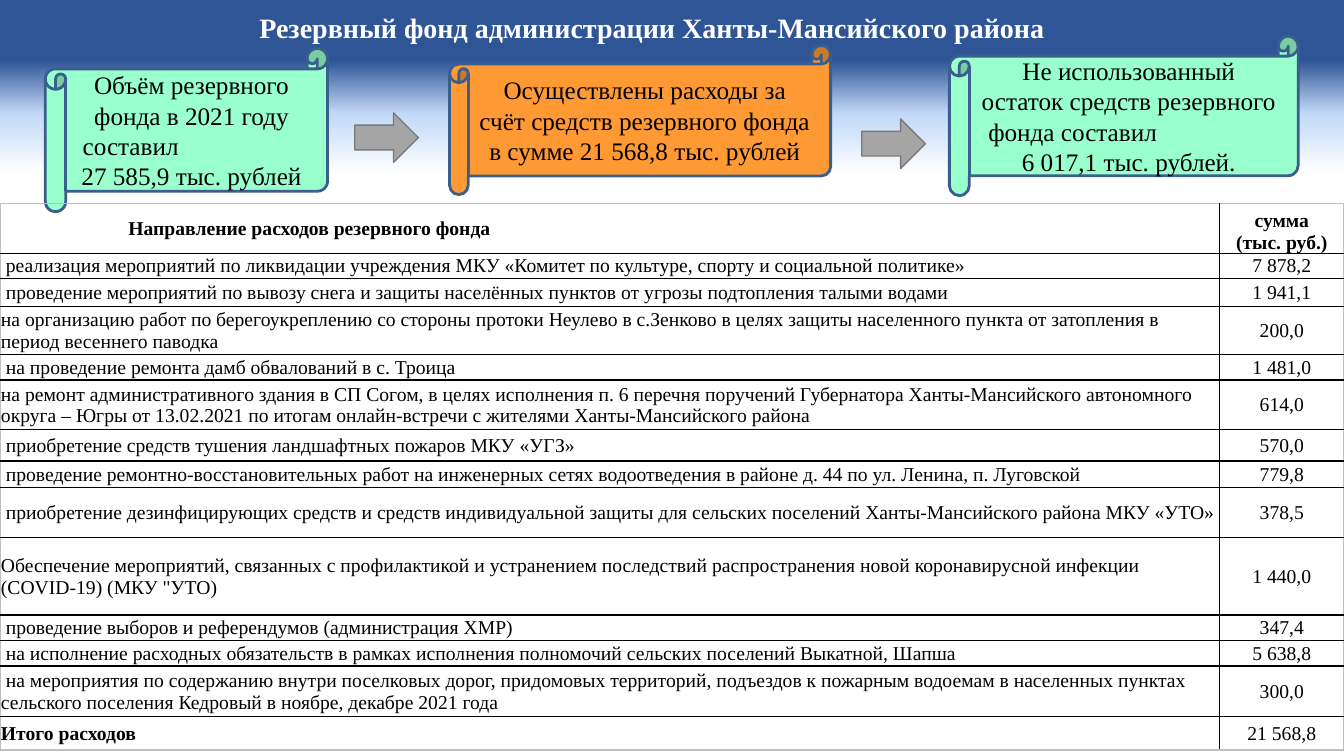
from lxml import etree
from pptx import Presentation
from pptx.dml.color import RGBColor
from pptx.enum.shapes import MSO_SHAPE as SHAPE
from pptx.enum.text import MSO_ANCHOR as ANCHOR, PP_ALIGN as ALIGN
from pptx.oxml.ns import qn
from pptx.util import Pt

COLORS = {
    "navy": "2F5597", "sky": "C2D8F8", "white": "FFFFFF", "black": "000000",
    "mint": "99FFCC", "orange": "FF9933", "outline": "3A5F8C",
    "arrow": "A5A5A5", "arrow_line": "7A7A7A", "frame": "BFBFBF",
}
FONT = "Times New Roman"

# Each scroll: box, fill, paragraphs as (text, left indent or None for centred)
SCROLLS = [
    ((32.4, 34.6, 201.6, 116.6), "mint",
     [("Объём резервного фонда в 2021 году", None), ("составил", 5),
      ("27 585,9 тыс. рублей", None)]),
    ((321.1, 32.4, 272.2, 106.6), "orange",
     [("Осуществлены расходы за счёт средств резервного фонда "
       "в сумме 21 568,8 тыс. рублей", None)]),
    ((678.2, 25.9, 249.1, 113.8), "mint",
     [("Не использованный остаток средств резервного", None),
      ("фонда составил", 6.5), ("6 017,1 тыс. рублей.", None)]),
]
ARROWS = [(253.4, 80.6), (615.6, 85)]

# Row height, direction of spending, sum
EXPENSES = [
    (35.5, "Направление расходов резервного фонда", "сумма\n(тыс. руб.)"),
    (18, " реализация мероприятий по ликвидации учреждения МКУ «Комитет по культуре, "
         "спорту и социальной политике»", "7 878,2"),
    (20, " проведение мероприятий по вывозу снега и защиты населённых пунктов "
         "от угрозы подтопления талыми водами", "1 941,1"),
    (34.5, "на организацию работ по берегоукреплению со стороны протоки Неулево в с.Зенково "
           "в целях защиты населенного пункта от затопления в период весеннего паводка", "200,0"),
    (18, " на проведение ремонта дамб обвалований в с. Троица", "1 481,0"),
    (35.5, "на ремонт административного здания в СП Согом, в целях исполнения п. 6 перечня "
           "поручений Губернатора Ханты-Мансийского автономного округа – Югры от 13.02.2021 "
           "по итогам онлайн-встречи с жителями Ханты-Мансийского района", "614,0"),
    (22.5, " приобретение средств тушения ландшафтных пожаров МКУ «УГЗ»", "570,0"),
    (19, " проведение ремонтно-восстановительных работ на инженерных сетях водоотведения "
         "в районе д. 44 по ул. Ленина, п. Луговской", "779,8"),
    (35.5, " приобретение дезинфицирующих средств и средств индивидуальной защиты "
           "для сельских поселений Ханты-Мансийского района МКУ «УТО»", "378,5"),
    (55.5, "Обеспечение мероприятий, связанных с профилактикой и устранением последствий "
           "распространения новой коронавирусной инфекции (COVID-19) (МКУ \"УТО)", "1 440,0"),
    (18, " проведение выборов и референдумов (администрация ХМР)", "347,4"),
    (18.5, " на исполнение расходных обязательств в рамках исполнения полномочий "
           "сельских поселений Выкатной, Шапша", "5 638,8"),
    (36, " на мероприятия по содержанию внутри поселковых дорог, придомовых территорий, "
         "подъездов к пожарным водоемам в населенных пунктах сельского поселения Кедровый "
         "в ноябре, декабре 2021 года", "300,0"),
    (24, "Итого расходов", "21 568,8"),
]


def rgb(name):
    return RGBColor.from_string(COLORS[name])


class SlideBuilder:
    def __init__(self, slide):
        self.slide = slide

    def background(self, stops):
        fill = self.slide.background.fill
        fill.gradient()
        fill.gradient_angle = 270
        stop_list = self.slide.background._cSld.find(".//" + qn("a:gsLst"))
        stop_list.clear()
        for percent, color in stops:
            stop = etree.SubElement(stop_list, qn("a:gs"), pos=str(percent * 1000))
            etree.SubElement(stop, qn("a:srgbClr"), val=COLORS[color])

    def format(self, p, size, color="black", bold=False, align=ALIGN.CENTER, indent=0):
        p.alignment = align
        p.font.name, p.font.size, p.font.bold = FONT, Pt(size), bold
        p.font.color.rgb = rgb(color)
        if indent:
            p._p.get_or_add_pPr().set("marL", str(Pt(indent)))

    def title(self, text, left, top, width, height):
        sp = self.slide.shapes.title
        sp.left, sp.top, sp.width, sp.height = map(Pt, (left, top, width, height))
        tf = sp.text_frame
        tf.text, tf.word_wrap, tf.vertical_anchor = text, True, ANCHOR.TOP
        p = tf.paragraphs[0]
        p.line_spacing, p.space_before = 1.0, Pt(0)
        self.format(p, 20, "white", bold=True)

    def shape(self, kind, box, fill, line, line_width):
        sp = self.slide.shapes.add_shape(kind, *map(Pt, box))
        sp.shadow.inherit = False
        sp.fill.solid()
        sp.fill.fore_color.rgb = rgb(fill)
        sp.line.color.rgb = rgb(line)
        sp.line.width = Pt(line_width)
        return sp

    def scroll(self, box, fill, paragraphs):
        tf = self.shape(SHAPE.HORIZONTAL_SCROLL, box, fill, "outline", 2).text_frame
        tf.word_wrap, tf.vertical_anchor = True, ANCHOR.MIDDLE
        tf.text = "\n".join(text for text, _ in paragraphs)
        for p, (_, indent) in zip(tf.paragraphs, paragraphs):
            self.format(p, 18, align=ALIGN.LEFT if indent else ALIGN.CENTER, indent=indent)

    def arrow(self, left, top):
        self.shape(SHAPE.RIGHT_ARROW, (left, top, 45.4, 35.3), "arrow", "arrow_line", 1)

    def borders(self, cell, edges):
        """Draw cell edges given as (side, colour), in schema order."""
        tc_pr = cell._tc.get_or_add_tcPr()
        for i, (side, color) in enumerate(edges):
            ln = etree.Element(qn("a:ln" + side), w=str(Pt(1)))
            solid = etree.SubElement(ln, qn("a:solidFill"))
            etree.SubElement(solid, qn("a:srgbClr"), val=COLORS[color])
            tc_pr.insert(i, ln)

    def table(self, rows, left, top, widths):
        height = sum(row[0] for row in rows)
        frame = self.slide.shapes.add_table(
            len(rows), len(widths), *map(Pt, (left, top, sum(widths), height)))
        table = frame.table
        table.first_row = table.horz_banding = False
        for column, width in zip(table.columns, widths):
            column.width = Pt(width)
        last_row, last_col = len(rows) - 1, len(widths) - 1
        for r, (row_height, *texts) in enumerate(rows):
            table.rows[r].height = Pt(row_height)
            for c, text in enumerate(texts):
                cell = table.cell(r, c)
                cell.text = text
                cell.fill.background()
                cell.margin_left = cell.margin_right = cell.margin_top = Pt(0.7)
                cell.margin_bottom = 0
                header = r == 0
                cell.vertical_anchor = ANCHOR.BOTTOM if header and c else ANCHOR.MIDDLE
                for p in cell.text_frame.paragraphs:
                    self.format(p, 14, bold=header or (r == last_row and c == 0),
                                align=ALIGN.CENTER if c else ALIGN.LEFT,
                                indent=91 if header and c == 0 else 0)
                outer = {"L": c == 0, "R": c == last_col, "T": header, "B": r == last_row}
                self.borders(cell, [(side, "frame" if out else "black")
                                    for side, out in outer.items()])


def main():
    prs = Presentation()
    prs.slide_width, prs.slide_height = Pt(960), Pt(540)
    s = SlideBuilder(prs.slides.add_slide(prs.slide_layouts[5]))
    s.background([(8, "navy"), (15, "sky"), (23, "white")])
    s.title("Резервный фонд администрации Ханты-Мансийского района", 105.8, 3.6, 720, 31.7)
    for box, fill, paragraphs in SCROLLS:
        s.scroll(box, fill, paragraphs)
    s.table(EXPENSES, 0, 145.4, (871.2, 88.8))
    for left, top in ARROWS:
        s.arrow(left, top)
    prs.save("out.pptx")


if __name__ == "__main__":
    main()
